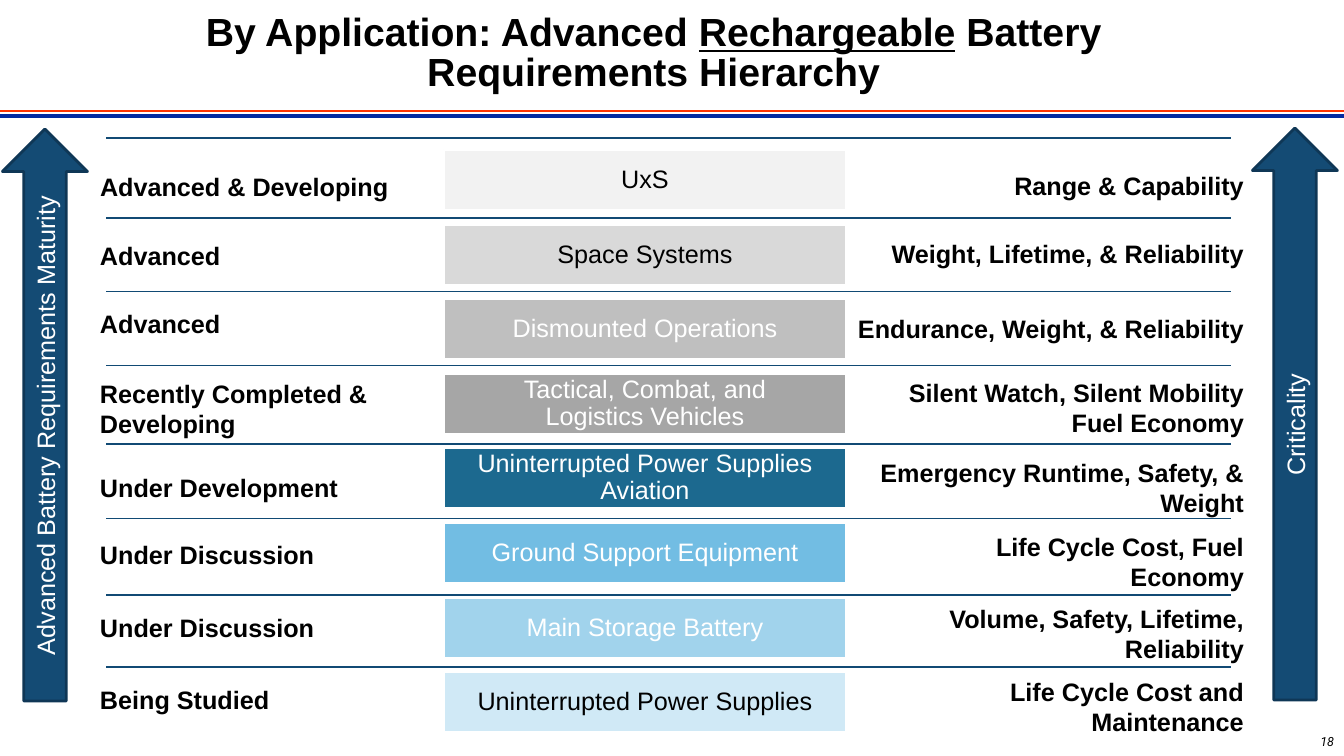
import pptx
import pptx.util
import pptx.dml.color
import pptx.enum.shapes
import pptx.enum.text
import pptx.oxml.ns
from lxml import etree

TITLE = [("By Application: Advanced ", False), ("Rechargeable", True),
         (" Battery Requirements Hierarchy", False)]
PAGE_NUMBER = "18"
ARROWS = [("Advanced Battery Requirements Maturity", 45, 415), ("Criticality", 1295, 414)]
BANDS = [(116, "032AA1", 2.25), (111, "FF3300", 2)]

# application, fill, font colour, side inset
APPLICATIONS = [
    ("UxS", "F2F2F2", "000000", 3),
    ("Space Systems", "D9D9D9", "000000", 37),
    ("Dismounted Operations", "BFBFBF", "FFFFFF", 55),
    ("Tactical, Combat, and Logistics Vehicles", "A6A6A6", "FFFFFF", 73),
    ("Uninterrupted Power Supplies Aviation", "1C698F", "FFFFFF", 5),
    ("Ground Support Equipment", "72BDE3", "FFFFFF", 5),
    ("Main Storage Battery", "A1D3EC", "FFFFFF", 2),
    ("Uninterrupted Power Supplies", "D0E9F6", "000000", 2),
]
MATURITY = [
    ("Advanced & Developing", 166, 331, 40),
    ("Advanced", 235, 160, 40),
    ("Advanced", 303, 160, 40),
    ("Recently Completed & Developing", 373, 307, 72),
    ("Under Development", 467, 307, 40),
    ("Under Discussion", 534, 307, 40),
    ("Under Discussion", 607, 307, 40),
    ("Being Studied", 679, 307, 40),
]
CRITICALITY = [
    ("Range & Capability", 165, 352, 40),
    ("Weight, Lifetime, & Reliability", 233, 449, 40),
    ("Endurance, Weight, & Reliability", 308, 445, 40),
    ("Silent Watch, Silent Mobility Fuel Economy", 372, 370, 72),
    ("Emergency Runtime, Safety, & Weight", 452, 400, 72),
    ("Life Cycle Cost, Fuel Economy", 526, 284, 72),
    ("Volume, Safety, Lifetime, Reliability", 598, 370, 72),
    ("Life Cycle Cost and Maintenance", 671, 277, 72),
]
RULES = [138, 218, 292, 366, 444, 519, 595, 667]

THEME = {
    "text": "000000", "light": "FFFFFF", "rule": "114A74",
    "arrow": "144B74", "arrow_edge": "0F3756",
    "title_size": 28, "body_size": 18, "number_size": 9,
    "font": "Arial", "number_font": "Roboto",
}
PAGE_WIDTH, PAGE_HEIGHT = 1344, 756
ALIGN = pptx.enum.text.PP_ALIGN
ANCHOR = pptx.enum.text.MSO_ANCHOR
SHAPE = pptx.enum.shapes.MSO_SHAPE


def px(length):
    return round(length * 914400 / 100.8)


def colour(value):
    return pptx.dml.color.RGBColor.from_string(value)


def apply(target, values):
    for name, value in values.items():
        setattr(target, name, value)


def place(shape, left, top, width, height):
    apply(shape, {"left": px(left), "top": px(top), "width": px(width), "height": px(height)})


def write(shape, spans, align, size=THEME["body_size"], font=THEME["font"], ink=THEME["text"],
          bold=False, italic=False, spacing=1.0, anchor=ANCHOR.TOP, inset=(10, 5)):
    side, edge = px(inset[0]), px(inset[1])
    apply(shape.text_frame, {
        "word_wrap": True, "auto_size": pptx.enum.text.MSO_AUTO_SIZE.NONE,
        "vertical_anchor": anchor, "margin_left": side, "margin_right": side,
        "margin_top": edge, "margin_bottom": edge})
    para = shape.text_frame.paragraphs[0]
    apply(para, {"alignment": align, "line_spacing": spacing, "space_before": 0})
    for text, underline in spans:
        span = para.add_run()
        span.text = text
        apply(span.font, {"name": font, "size": pptx.util.Pt(size), "bold": bold,
                          "italic": italic, "underline": underline})
        span.font.color.rgb = colour(ink)


def add_label(page, text, left, top, width, height, align, **style):
    box = page.shapes.add_textbox(px(left), px(top), px(width), px(height))
    write(box, [(text, False)], align, **style)


def add_block(page, kind, left, top, width, height, fill, edge):
    block = page.shapes.add_shape(kind, px(left), px(top), px(width), px(height))
    block.shadow.inherit = False
    block.fill.solid()
    block.fill.fore_color.rgb = colour(fill)
    block.line.color.rgb = colour(edge)
    block.line.width = pptx.util.Pt(2)
    return block


def add_rule(page, start, end, top, ink, weight):
    rule = page.shapes.add_connector(pptx.enum.shapes.MSO_CONNECTOR.STRAIGHT,
                                     px(start), px(top), px(end), px(top))
    rule.line.color.rgb = colour(ink)
    rule.line.width = pptx.util.Pt(weight)
    etree.SubElement(rule._element.spPr, pptx.oxml.ns.qn("a:effectLst"))


def main():
    deck = pptx.Presentation()
    apply(deck, {"slide_width": px(PAGE_WIDTH), "slide_height": px(PAGE_HEIGHT)})
    page = deck.slides.add_slide(deck.slide_layouts[5])

    title = page.shapes.title
    place(title, 105, 25, 1097, 60)
    write(title, TITLE, ALIGN.CENTER, size=THEME["title_size"], bold=True,
          spacing=0.85, anchor=ANCHOR.MIDDLE)
    for top, ink, weight in BANDS:
        add_rule(page, 0, PAGE_WIDTH, top, ink, weight)
    add_label(page, PAGE_NUMBER, 1210, 729, 134, 27, ALIGN.RIGHT, italic=True,
              size=THEME["number_size"], font=THEME["number_font"])

    for row, (text, fill, ink, side) in enumerate(APPLICATIONS):
        block = add_block(page, SHAPE.RECTANGLE, 444, round(150 + 74.6 * row), 402, 60,
                          fill, THEME["light"])
        write(block, [(text, False)], ALIGN.CENTER, ink=ink, spacing=0.9,
              anchor=ANCHOR.MIDDLE, inset=(side, 3))
    for text, top, width, height in MATURITY:
        add_label(page, text, 90, top, width, height, ALIGN.LEFT, bold=True)
    for text, top, width, height in CRITICALITY:
        add_label(page, text, 1254 - width, top, width, height, ALIGN.RIGHT, bold=True)
    for top in RULES:
        add_rule(page, 1231, 106, top, THEME["rule"], 0.75)

    length, breadth = 572, 85
    for text, middle_x, middle_y in ARROWS:
        arrow = add_block(page, SHAPE.RIGHT_ARROW, middle_x - length / 2, middle_y - breadth / 2,
                          length, breadth, THEME["arrow"], THEME["arrow_edge"])
        arrow.rotation = 270
        write(arrow, [(text, False)], ALIGN.CENTER, ink=THEME["light"], anchor=ANCHOR.MIDDLE)

    deck.save("out.pptx")


if __name__ == "__main__":
    main()
